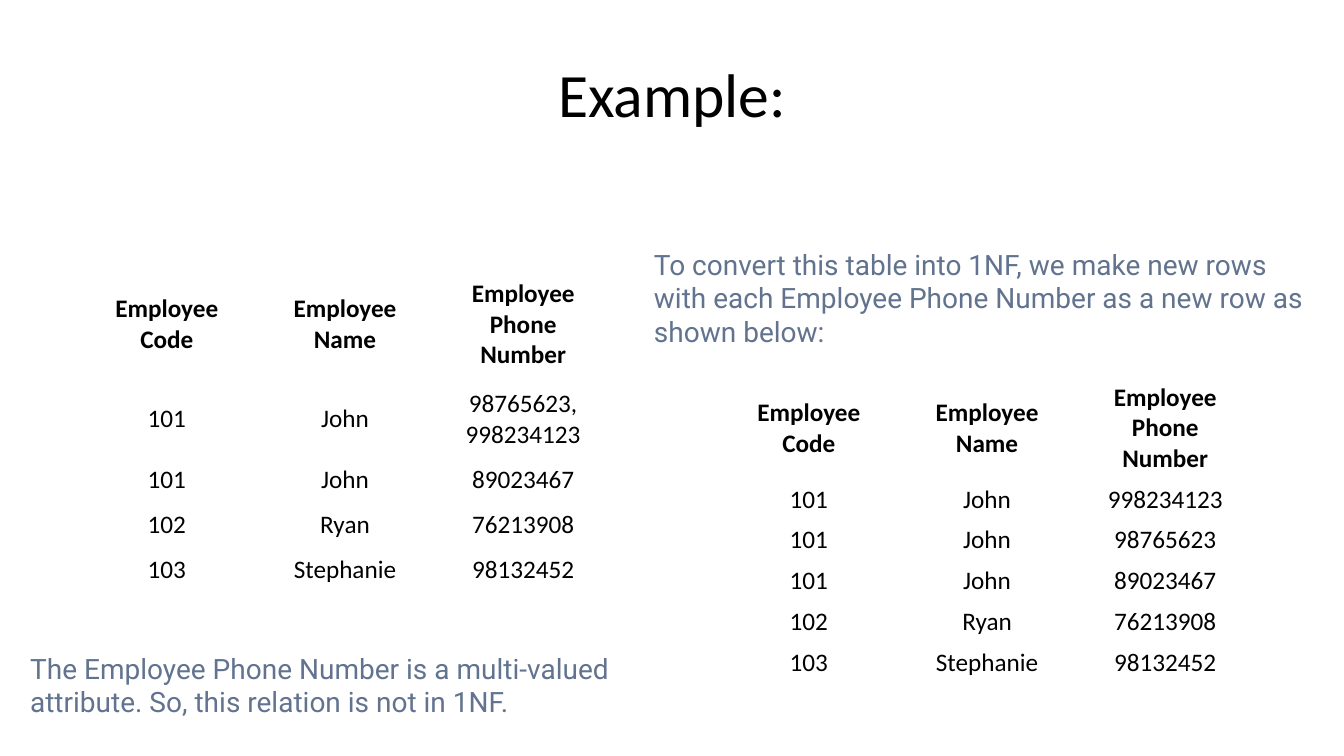
import pptx
import pptx.dml.color
import pptx.enum.text
import pptx.util
from pptx.util import Cm

COLORS = {"background": "FFFFFF", "text": "000000", "note": "61738E"}
ALIGN = pptx.enum.text.PP_ALIGN
ANCHOR = pptx.enum.text.MSO_ANCHOR

COLUMN_WIDTH = Cm(4.49)
HEADER = ["Employee Code", "Employee Name", "Employee Phone Number"]
MULTI_VALUED_ROWS = [
    HEADER,
    ["101", "John", "98765623,\n998234123"],
    ["101", "John", "89023467"],
    ["102", "Ryan", "76213908"],
    ["103", "Stephanie", "98132452"],
]
FIRST_NORMAL_FORM_ROWS = [
    HEADER,
    ["101", "John", "998234123"],
    ["101", "John", "98765623"],
    ["101", "John", "89023467"],
    ["102", "Ryan", "76213908"],
    ["103", "Stephanie", "98132452"],
]


def rgb(name):
    return pptx.dml.color.RGBColor.from_string(COLORS[name])


def write_text(frame, text, size=18, font="Calibri", color="text",
               bold=False, align=ALIGN.CENTER):
    """Fill a text frame, one paragraph for each line of text."""
    frame.text = text
    for paragraph in frame.paragraphs:
        paragraph.alignment = align
        for run in paragraph.runs:
            run.font.size = pptx.util.Pt(size)
            run.font.name = font
            run.font.bold = bold
            run.font.color.rgb = rgb(color)


def add_text_box(slide, text, left, top, width, height,
                 anchor=ANCHOR.TOP, **text_format):
    frame = slide.shapes.add_textbox(left, top, width, height).text_frame
    frame.word_wrap = True
    frame.vertical_anchor = anchor
    write_text(frame, text, **text_format)


def add_note(slide, text, left, top, height):
    add_text_box(slide, text, left, top, Cm(16.94), height,
                 size=20, font="Roboto", color="note", align=ALIGN.LEFT)


def add_employee_table(slide, rows, left, top, row_heights):
    table = slide.shapes.add_table(
        len(rows), len(HEADER), left, top,
        COLUMN_WIDTH * len(HEADER), sum(row_heights)).table
    table.horz_banding = False
    table.first_row = False
    for column in table.columns:
        column.width = COLUMN_WIDTH
    for row_index, values in enumerate(rows):
        table.rows[row_index].height = row_heights[row_index]
        for column_index, value in enumerate(values):
            cell = table.cell(row_index, column_index)
            cell.fill.background()
            cell.vertical_anchor = ANCHOR.MIDDLE
            write_text(cell.text_frame, value, bold=row_index == 0)


def main():
    presentation = pptx.Presentation()
    presentation.slide_width = Cm(33.87)
    presentation.slide_height = Cm(19.05)
    slide = presentation.slides.add_slide(presentation.slide_layouts[6])
    slide.background.fill.solid()
    slide.background.fill.fore_color.rgb = rgb("background")

    # Title
    add_text_box(slide, "Example:", Cm(1.7), Cm(0.76), Cm(30.48), Cm(3.18),
                 anchor=ANCHOR.MIDDLE, size=44)

    # Relation with a multi-valued attribute
    add_employee_table(slide, MULTI_VALUED_ROWS, Cm(1.96), Cm(6.78),
                       [Cm(2.8), Cm(1.96)] + [Cm(1.13)] * 3)
    add_note(slide, "The Employee Phone Number is a multi-valued attribute. "
             "So, this relation is not in 1NF.", Cm(0.51), Cm(16.28), Cm(1.96))

    # Relation in first normal form
    add_note(slide, "To convert this table into 1NF, we make new rows with "
             "each Employee Phone Number as a new row as shown below:",
             Cm(16.23), Cm(6.1), Cm(2.82))
    add_employee_table(slide, FIRST_NORMAL_FORM_ROWS, Cm(18.14), Cm(9.5),
                       [Cm(2.57)] + [Cm(1.03)] * 5)

    presentation.save("out.pptx")


if __name__ == "__main__":
    main()
